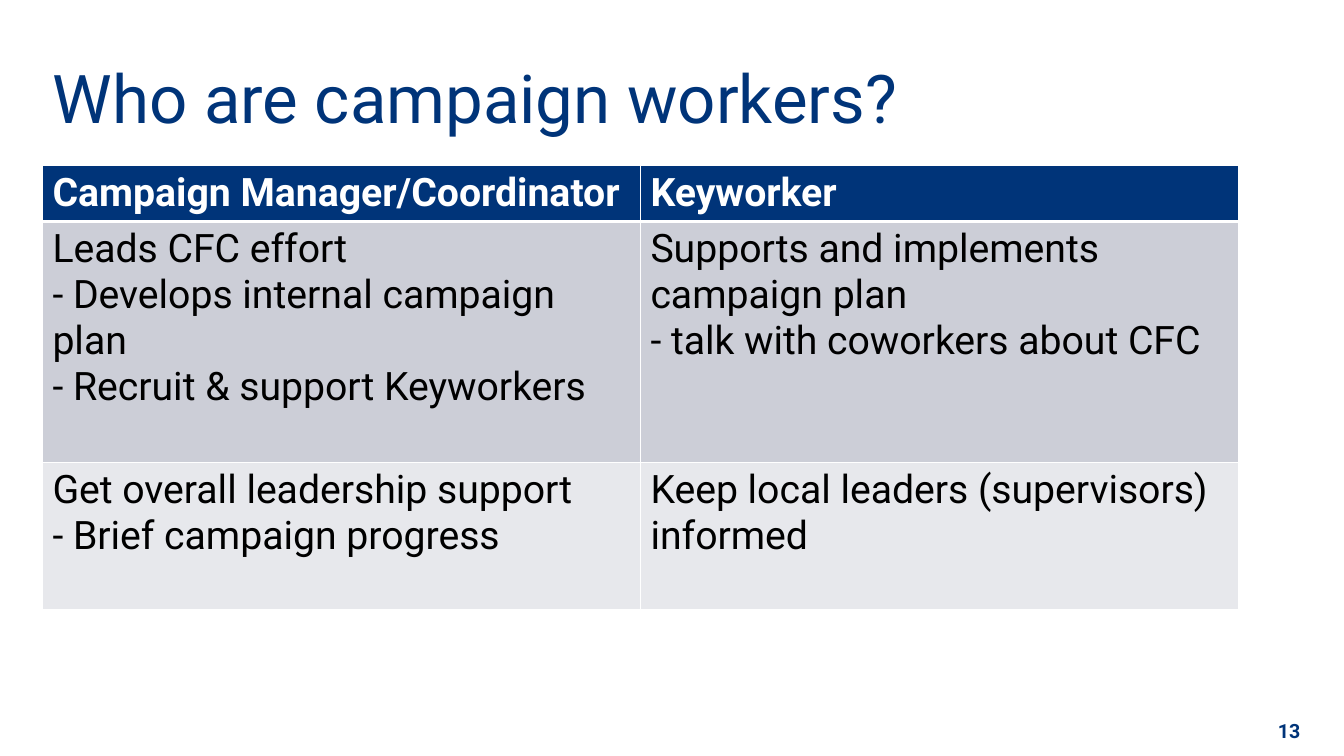
from dataclasses import dataclass

from pptx import Presentation
from pptx.dml.color import RGBColor
from pptx.enum.text import MSO_ANCHOR, MSO_AUTO_SIZE, PP_ALIGN
from pptx.oxml import parse_xml
from pptx.oxml.ns import nsdecls
from pptx.util import Cm, Pt


@dataclass(frozen=True)
class Theme:
    font: str = "Roboto"
    navy: str = "003479"
    white: str = "FFFFFF"
    black: str = "000000"
    row_fills: tuple = ("003479", "CCCED7", "E7E8EC")
    title_size: int = 48
    table_size: int = 28
    number_size: int = 14


theme = Theme()


def style_text(paragraph, size, color, bold=False):
    font_format = {"name": theme.font, "size": Pt(size), "bold": bold}
    for attribute, value in font_format.items():
        setattr(paragraph.font, attribute, value)
    paragraph.font.color.rgb = RGBColor.from_string(color)


def add_borders(cell, widths):
    """Draw white cell borders; widths maps each side (L, R, T, B) to points."""
    properties = cell._tc.get_or_add_tcPr()
    for position, (side, width) in enumerate(widths.items()):
        properties.insert(position, parse_xml(
            f'<a:ln{side} {nsdecls("a")} w="{Pt(width)}"><a:solidFill>'
            f'<a:srgbClr val="{theme.white}"/></a:solidFill></a:ln{side}>'))


prs = Presentation()
prs.slide_width, prs.slide_height = Cm(33.87), Cm(19.05)
slide = prs.slides.add_slide(prs.slide_layouts[5])

# Title
title = slide.shapes.title
title_place = {"left": Cm(1.07), "top": Cm(1.17), "width": Cm(30.76), "height": Cm(2.36)}
for attribute, value in title_place.items():
    setattr(title, attribute, value)
title_frame = title.text_frame
title_frame.text = "Who are campaign workers?"
title_frame.auto_size = MSO_AUTO_SIZE.NONE
title_frame.vertical_anchor = MSO_ANCHOR.MIDDLE
heading = title_frame.paragraphs[0]
heading.alignment = PP_ALIGN.LEFT
heading.line_spacing = 1.08
style_text(heading, theme.title_size, theme.navy)

# Roles table
roles = [
    ["Campaign Manager/Coordinator", "Keyworker"],
    ["Leads CFC effort\n- Develops internal campaign plan\n- Recruit & support Keyworkers",
     "Supports and implements campaign plan\n- talk with coworkers about CFC"],
    ["Get overall leadership support\n- Brief campaign progress",
     "Keep local leaders (supervisors) informed"],
]
row_heights = [1.39, 6.07, 3.71]
column_width = 15.07
roles_table = slide.shapes.add_table(
    len(roles), 2, Cm(1.07), Cm(4.17), Cm(2 * column_width), Cm(sum(row_heights))).table
for column in roles_table.columns:
    column.width = Cm(column_width)

for row_index, (row_texts, row_height) in enumerate(zip(roles, row_heights)):
    roles_table.rows[row_index].height = Cm(row_height)
    is_header = row_index == 0
    text_color = theme.white if is_header else theme.black
    border_widths = {"L": 1, "R": 1, "T": 3 if row_index == 1 else 1, "B": 3 if is_header else 1}
    for column_index, role_text in enumerate(row_texts):
        cell = roles_table.cell(row_index, column_index)
        cell.text = role_text
        cell.fill.solid()
        cell.fill.fore_color.rgb = RGBColor.from_string(theme.row_fills[row_index])
        add_borders(cell, border_widths)
        for paragraph in cell.text_frame.paragraphs:
            style_text(paragraph, theme.table_size, text_color, bold=is_header)

# Slide number
page_number = slide.shapes.add_textbox(Cm(31.75), Cm(17.98), Cm(1.27), Cm(0.86)).text_frame
page_number.word_wrap = True
page_number.text = "13"
page_number.paragraphs[0].alignment = PP_ALIGN.RIGHT
style_text(page_number.paragraphs[0], theme.number_size, theme.navy, bold=True)

prs.save("out.pptx")
